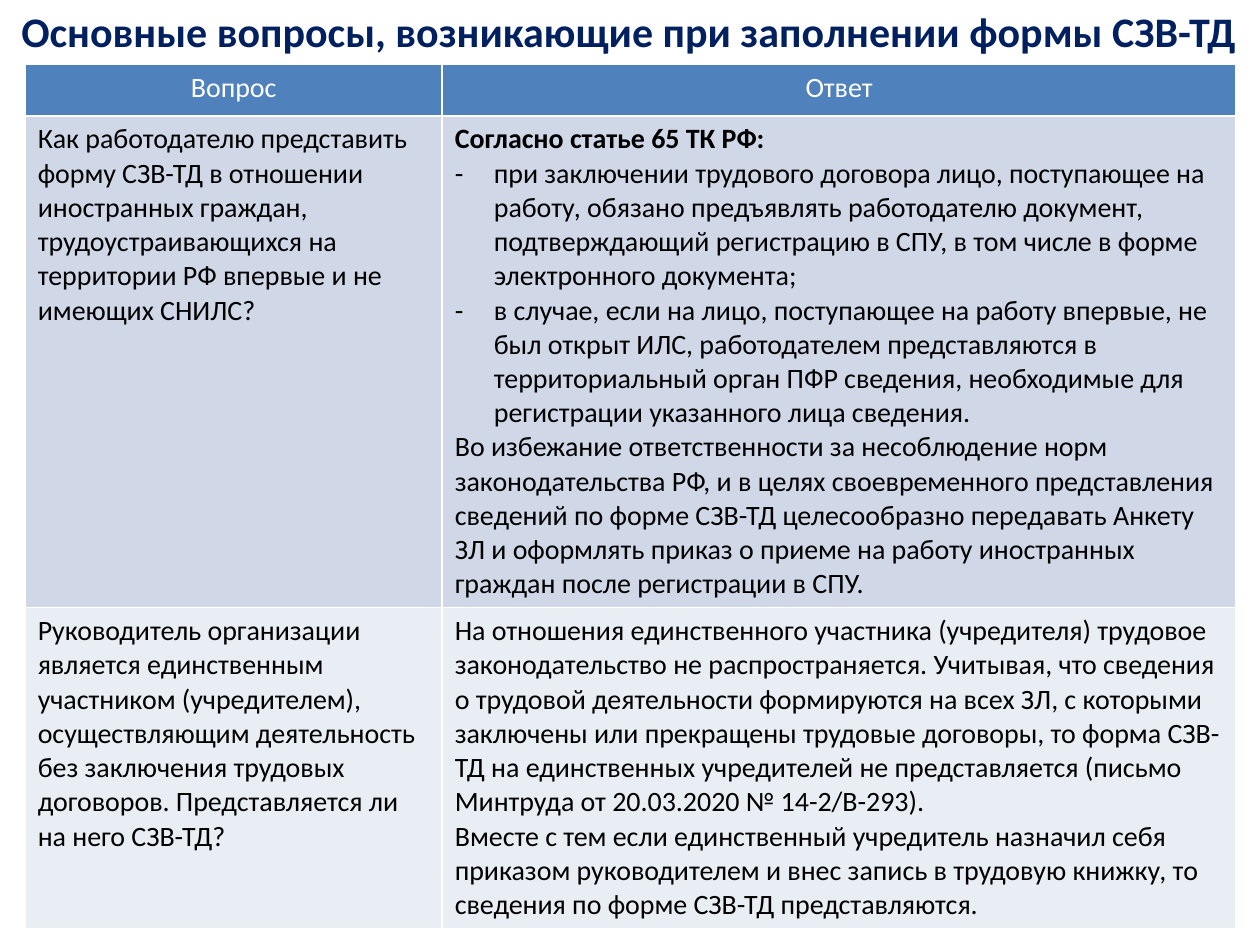
from lxml.etree import SubElement
from pptx import Presentation
from pptx.dml.color import RGBColor
from pptx.enum.text import PP_ALIGN as Align
from pptx.oxml.ns import qn
from pptx.util import Inches, Pt

COLORS = {
    "title": "002060",
    "header": "4F81BD",
    "header_text": "FFFFFF",
    "text": "000000",
    "bands": ["D0D8E8", "E9EDF4"],
}
FONT = "Calibri"
WIDTH, HEIGHT = 10, 7.5
TITLE = "Основные вопросы, возникающие при заполнении формы СЗВ-ТД"
HEADERS = ["Вопрос", "Ответ"]

# Each answer is a list of (kind, text) paragraphs.
QUESTIONS = [
    (
        "Как работодателю представить форму СЗВ-ТД в отношении иностранных граждан, "
        "трудоустраивающихся на территории РФ впервые и не имеющих СНИЛС?",
        [
            ("bold", "Согласно статье 65 ТК РФ:"),
            ("dash", "при заключении трудового договора лицо, поступающее на работу, "
                     "обязано предъявлять работодателю документ, подтверждающий "
                     "регистрацию в СПУ, в том числе в форме электронного документа;"),
            ("dash", "в случае, если на лицо, поступающее на работу впервые, не был "
                     "открыт ИЛС, работодателем представляются в территориальный орган "
                     "ПФР сведения, необходимые для регистрации указанного лица сведения."),
            ("plain", "Во избежание ответственности за несоблюдение норм "
                      "законодательства РФ, и в целях своевременного представления "
                      "сведений по форме СЗВ-ТД целесообразно передавать Анкету ЗЛ и "
                      "оформлять приказ о приеме на работу иностранных граждан после "
                      "регистрации в СПУ."),
        ],
    ),
    (
        "Руководитель организации является единственным участником (учредителем), "
        "осуществляющим деятельность без заключения трудовых договоров. "
        "Представляется ли на него СЗВ-ТД?",
        [
            ("plain", "На отношения единственного участника (учредителя) трудовое "
                      "законодательство не распространяется. Учитывая, что сведения о "
                      "трудовой деятельности формируются на всех ЗЛ, с которыми заключены "
                      "или прекращены трудовые договоры, то форма СЗВ-ТД на единственных "
                      "учредителей не представляется (письмо Минтруда от 20.03.2020 "
                      "№ 14-2/В-293)."),
            ("plain", "Вместе с тем если единственный учредитель назначил себя приказом "
                      "руководителем и внес запись в трудовую книжку, то сведения по "
                      "форме СЗВ-ТД представляются."),
        ],
    ),
]


class SlideBuilder:
    def __init__(self, slide):
        self.slide = slide

    def table(self, left, top, columns, rows):
        """Add a table whose sides are given in inches."""
        frame = self.slide.shapes.add_table(
            len(rows), len(columns), Inches(left), Inches(top),
            Inches(sum(columns)), Inches(sum(rows)))
        table = frame.table
        for column, width in zip(table.columns, columns):
            column.width = Inches(width)
        for row, height in zip(table.rows, rows):
            row.height = Inches(height)
        return table

    def cell(self, cell, paragraphs, color, fill=None, size=16, align=None):
        if fill:
            cell.fill.solid()
            cell.fill.fore_color.rgb = RGBColor.from_string(fill)
        else:
            cell.fill.background()
        frame = cell.text_frame
        for index, (kind, text) in enumerate(paragraphs):
            paragraph = frame.add_paragraph() if index else frame.paragraphs[0]
            paragraph.alignment = align
            if kind == "dash":
                self.dash(paragraph)
            run = paragraph.add_run()
            run.text = text
            font = run.font
            font.name, font.size, font.bold = FONT, Pt(size), kind == "bold"
            font.color.rgb = RGBColor.from_string(color)

    def dash(self, paragraph):
        """Give the paragraph a hanging dash bullet."""
        properties = paragraph._p.get_or_add_pPr()
        indent = Inches(0.31)
        properties.set("marL", str(indent))
        properties.set("indent", str(-indent))
        SubElement(properties, qn("a:buFont"), typeface=FONT)
        SubElement(properties, qn("a:buChar"), char="-")

    def clear_borders(self, cell):
        properties = cell._tc.get_or_add_tcPr()
        for side in "LRTB":
            line = SubElement(properties, qn(f"a:ln{side}"), w="0")
            SubElement(line, qn("a:noFill"))

    def title(self, text):
        table = self.table(0.05, 0.01, [9.88], [0.71])
        table.first_row = table.horz_banding = False
        cell = table.cell(0, 0)
        self.clear_borders(cell)
        self.cell(cell, [("bold", text)], COLORS["title"], size=24, align=Align.CENTER)

    def questions(self, headers, questions):
        table = self.table(0.2, 0.51, [3.31, 6.3], [0.41, 3.9, 2.54])
        for column, header in enumerate(headers):
            self.cell(table.cell(0, column), [("plain", header)],
                      COLORS["header_text"], COLORS["header"], align=Align.CENTER)
        for row, ((question, answer), band) in enumerate(zip(questions, COLORS["bands"]), 1):
            for column, paragraphs in enumerate([[("plain", question)], answer]):
                self.cell(table.cell(row, column), paragraphs, COLORS["text"], band)


def main():
    presentation = Presentation()
    presentation.slide_width, presentation.slide_height = Inches(WIDTH), Inches(HEIGHT)
    slide = presentation.slides.add_slide(presentation.slide_layouts[6])
    builder = SlideBuilder(slide)
    builder.questions(HEADERS, QUESTIONS)
    builder.title(TITLE)
    presentation.save("out.pptx")


if __name__ == "__main__":
    main()
